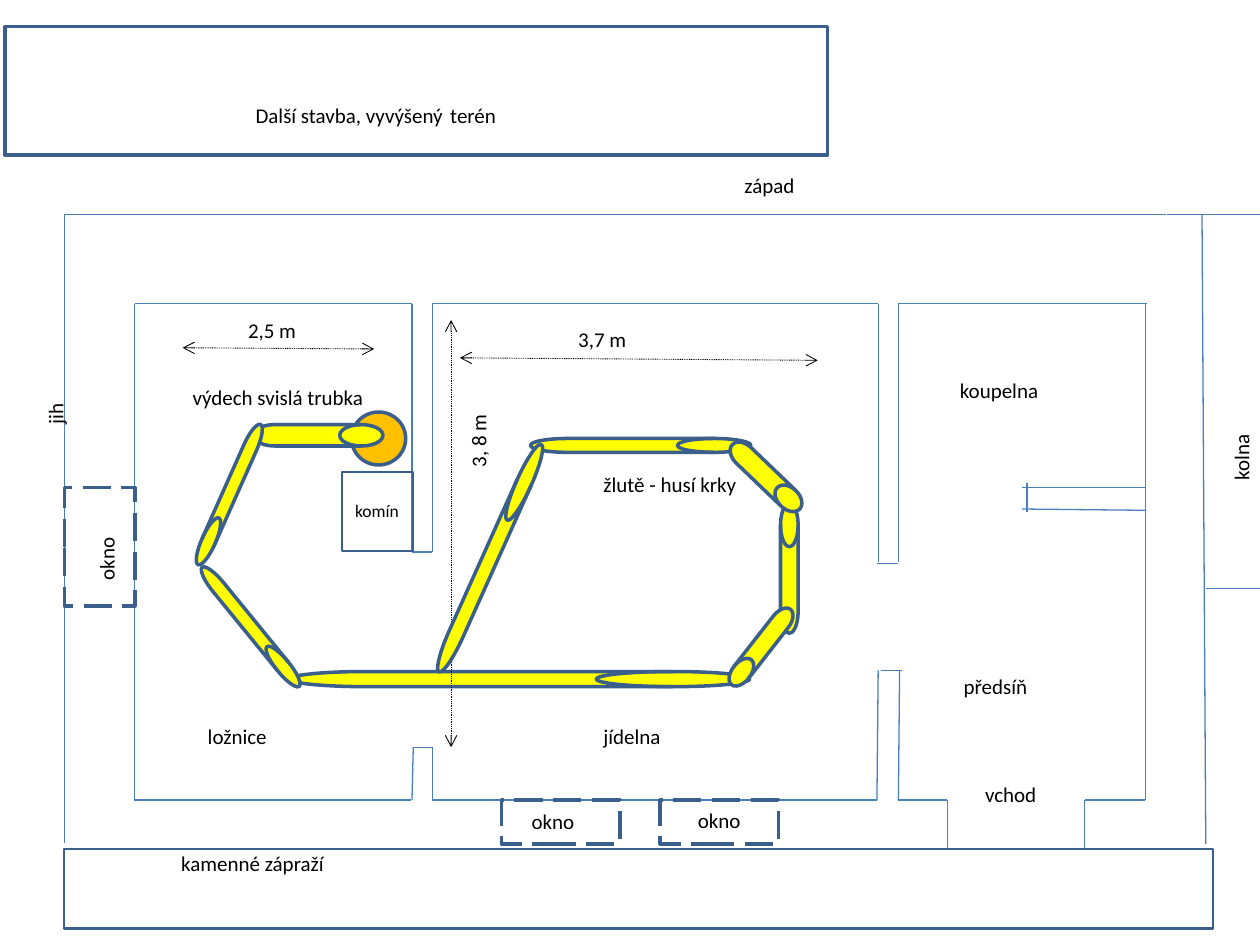
import pptx
import pptx.util
import pptx.dml.color
import pptx.enum.dml
import pptx.enum.shapes
import pptx.enum.text
import pptx.oxml.ns
import lxml.etree

Inches = pptx.util.Inches
Pt = pptx.util.Pt
RGBColor = pptx.dml.color.RGBColor
Dash = pptx.enum.dml.MSO_LINE
Shape = pptx.enum.shapes.MSO_SHAPE
qn = pptx.oxml.ns.qn

WALL = RGBColor(0x4B, 0x7E, 0xBC)
OUTLINE = RGBColor(0x3A, 0x5F, 0x8C)
YELLOW = RGBColor(0xFF, 0xFF, 0x00)
ORANGE = RGBColor(0xFF, 0xC0, 0x00)
BLACK = RGBColor(0, 0, 0)

deck = pptx.Presentation()
deck.slide_width = Inches(10)
deck.slide_height = Inches(7.5)
page = deck.slides.add_slide(deck.slide_layouts[6])


def add_line(x1, y1, x2, y2, color, width):
    line = page.shapes.add_connector(
        pptx.enum.shapes.MSO_CONNECTOR.STRAIGHT,
        Inches(x1), Inches(y1), Inches(x2), Inches(y2))
    line.line.color.rgb = color
    line.line.width = Pt(width)
    lxml.etree.SubElement(line._element.spPr, qn("a:effectLst"))
    return line


def add_block(kind, left, top, width, height, rotation=0, fill=None, weight=2):
    block = page.shapes.add_shape(
        kind, Inches(left), Inches(top), Inches(width), Inches(height))
    block.rotation = rotation
    block.shadow.inherit = False
    if fill is None:
        block.fill.background()
    else:
        block.fill.solid()
        block.fill.fore_color.rgb = fill
    block.line.color.rgb = OUTLINE
    block.line.width = Pt(weight)
    return block


# Walls
walls = [
    # outer walls and shed
    (0.51, 1.7, 9.25, 1.7), (9.26, 1.7, 10, 1.7), (0.51, 1.7, 0.51, 6.69),
    (9.54, 1.7, 9.57, 6.7), (9.57, 4.67, 10, 4.67), (0.51, 6.74, 7.91, 6.74),
    # bedroom
    (1.07, 2.41, 3.27, 2.41), (1.07, 2.41, 1.07, 6.35), (1.06, 6.35, 3.26, 6.35),
    (3.27, 2.41, 3.27, 4.38), (3.28, 5.93, 3.27, 6.35),
    (3.27, 4.38, 3.43, 4.38), (3.28, 5.93, 3.43, 5.93),
    # dining room
    (3.43, 2.41, 6.97, 2.41), (3.43, 6.35, 6.96, 6.35),
    (3.43, 2.41, 3.43, 4.38), (3.43, 5.93, 3.43, 6.35),
    (6.97, 2.41, 6.97, 4.46), (6.97, 5.32, 6.96, 6.35),
    (6.96, 4.47, 7.13, 4.47), (6.99, 5.32, 7.16, 5.32),
    # bathroom and hall
    (7.13, 2.41, 9.1, 2.41), (9.09, 2.41, 9.09, 6.35),
    (7.13, 2.41, 7.13, 4.46), (7.14, 5.32, 7.13, 6.35),
    (7.13, 6.35, 7.52, 6.35), (8.61, 6.35, 9.09, 6.35),
    (8.11, 3.87, 9.09, 3.87), (8.11, 4.04, 9.09, 4.05), (8.15, 4.06, 8.15, 3.83),
    # entrance
    (7.52, 6.74, 7.52, 6.35), (8.61, 6.74, 8.61, 6.35),
]
for wall in walls:
    add_line(*wall, WALL, 0.75)

# Windows
for left, top, width, height, rotation in [
        (3.98, 6.35, 0.94, 0.35, 0), (5.24, 6.35, 0.94, 0.35, 0),
        (0.32, 4.06, 0.94, 0.56, 90)]:
    window = add_block(Shape.RECTANGLE, left, top, width, height, rotation)
    window.line.dash_style = Dash.LONG_DASH

# Stone porch, neighbouring building, chimney
add_block(Shape.RECTANGLE, 0.51, 6.74, 9.12, 0.63, weight=1.25)
add_block(Shape.RECTANGLE, 0.04, 0.21, 6.53, 1.02)
add_block(Shape.RECTANGLE, 2.68, 3.78, 0.63, 0.56, 90, weight=1)

# Horizontal pipes of the dining room, below the dimension lines
PIPE = Shape.FLOWCHART_DIRECT_ACCESS_STORAGE
pipes = [
    # left, top, width, height, rotation, flipped
    (2.3, 5.33, 3.65, 0.12, 0, True),
    (4.21, 3.48, 1.75, 0.11, 0, False),
    (2.9, 4.37, 1.98, 0.12, 294.2, False),
    (5.75, 4.44, 1.03, 0.14, 270, False),
    (2.01, 3.37, 1.03, 0.17, 0, False),
    (1.38, 4.92, 1.22, 0.11, 50.8, True),
    (1.21, 3.87, 1.22, 0.11, 114, True),
    (5.66, 5.06, 0.76, 0.15, 128, True),
    (5.71, 3.7, 0.74, 0.17, 43.8, True),
]
for number, (left, top, width, height, rotation, flipped) in enumerate(pipes):
    if number == 2:
        # Dimension lines and vertical outlet lie between the pipe layers
        for ends in [(3.65, 2.84, 6.49, 2.86), (1.45, 2.76, 2.97, 2.77),
                     (3.58, 2.54, 3.58, 5.93)]:
            dimension = add_line(*ends, BLACK, 0.5)
            dimension.line.dash_style = Dash.ROUND_DOT
            stroke = dimension.line._get_or_add_ln()
            for tag in ("a:headEnd", "a:tailEnd"):
                lxml.etree.SubElement(stroke, qn(tag), type="arrow")
        add_block(Shape.OVAL, 2.79, 3.27, 0.43, 0.42, fill=ORANGE)
    pipe = add_block(PIPE, left, top, width, height, rotation, YELLOW)
    if flipped:
        pipe._element.spPr.find(qn("a:xfrm")).set("flipV", "1")

# Labels: left, top, width, height, rotation, wrap, runs of (text, size)
labels = [
    (7.52, 2.95, 1.18, 0.3, 0, True, [("koupelna", 12)]),
    (7.55, 5.3, 1.18, 0.3, 0, True, [("předsíň", 12)]),
    (4.69, 5.69, 1.18, 0.3, 0, True, [("jídelna", 12)]),
    (1.55, 5.69, 1.18, 0.3, 0, True, [("ložnice", 12)]),
    (1.34, 6.7, 1.43, 0.3, 0, False, [("kamenné zápraží", 12)]),
    (0.19, 3.05, 0.43, 0.4, 270, False, [("jih", 12), (" ", 18)]),
    (1.93, 0.68, 2.13, 0.4, 0, False,
     [("Další stavba, vyvýšený", 12), (" ", 18), ("terén", 12)]),
    (7.72, 6.07, 0.67, 0.4, 0, False, [("vchod", 12), (" ", 18)]),
    (9.72, 3.32, 0.57, 0.61, 270, False, [("kolna", 12)]),
    (1.43, 3, 1.61, 0.3, 0, False, [("výdech svislá trubka", 12)]),
    (5.81, 1.32, 0.6, 0.3, 0, False, [("západ", 12)]),
    (2.72, 3.92, 0.63, 0.27, 0, True, [("komín", 10)]),
    (1.87, 2.47, 0.59, 0.3, 0, False, [("2,5 m", 12)]),
    (4.49, 2.54, 0.59, 0.3, 0, False, [("3,7 m", 12)]),
    (3.48, 3.34, 0.63, 0.3, 270, False, [("3, 8 m", 12)]),
    (4.69, 3.69, 1.27, 0.3, 0, False, [("žlutě - husí krky", 12)]),
    (0.57, 4.28, 0.55, 0.3, 270, False, [("okno", 12)]),
    (4.12, 6.37, 0.75, 0.3, 0, True, [("okno", 12)]),
    (5.44, 6.36, 0.75, 0.3, 0, True, [("okno", 12)]),
]
for left, top, width, height, rotation, wrap, runs in labels:
    box = page.shapes.add_textbox(
        Inches(left), Inches(top), Inches(width), Inches(height))
    box.rotation = rotation
    box.text_frame.word_wrap = wrap
    box.text_frame.auto_size = pptx.enum.text.MSO_AUTO_SIZE.SHAPE_TO_FIT_TEXT
    para = box.text_frame.paragraphs[0]
    for text, size in runs:
        span = para.add_run()
        span.text = text
        span.font.name = "Calibri"
        span.font.size = Pt(size)
        span.font.color.rgb = BLACK

deck.save("out.pptx")
